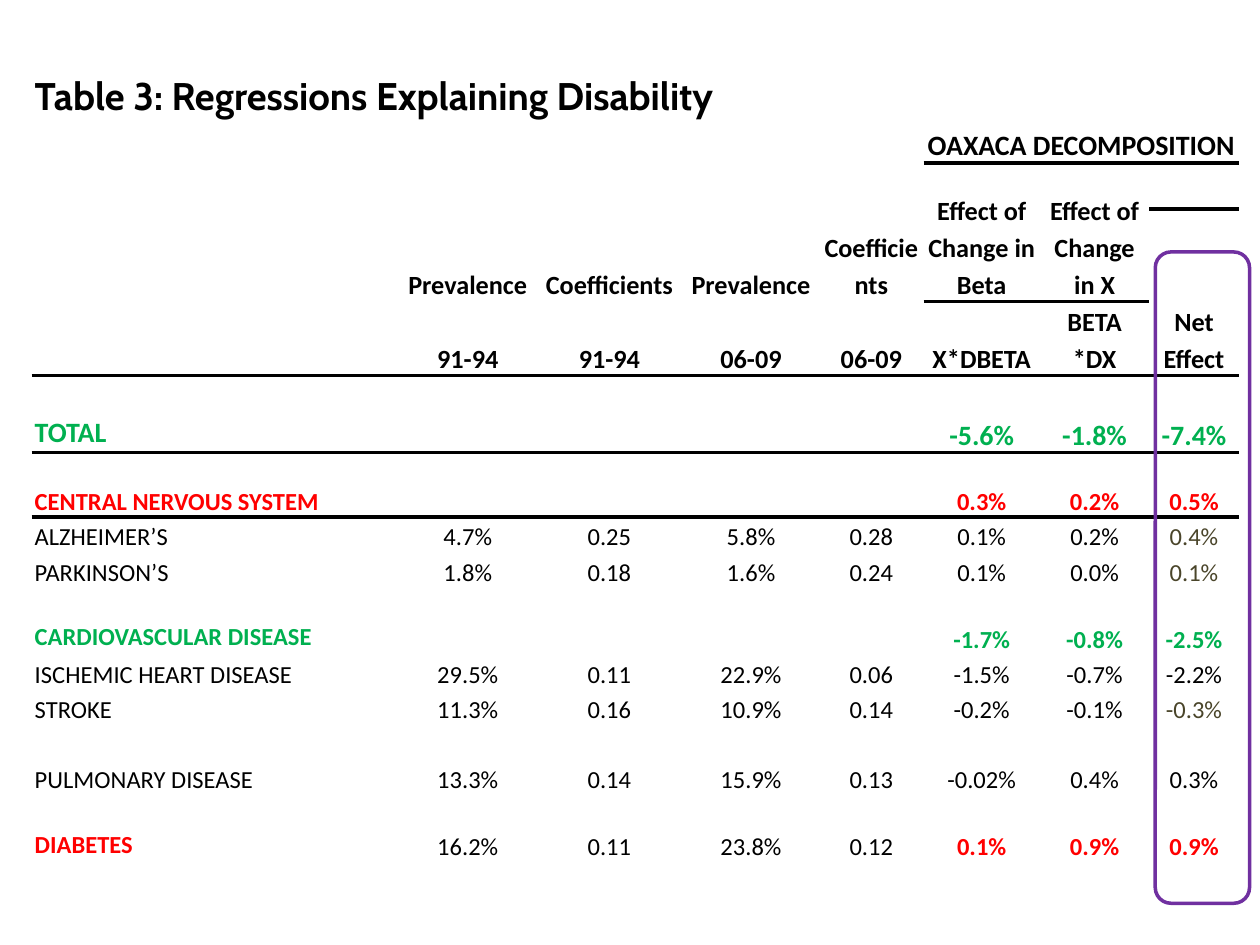
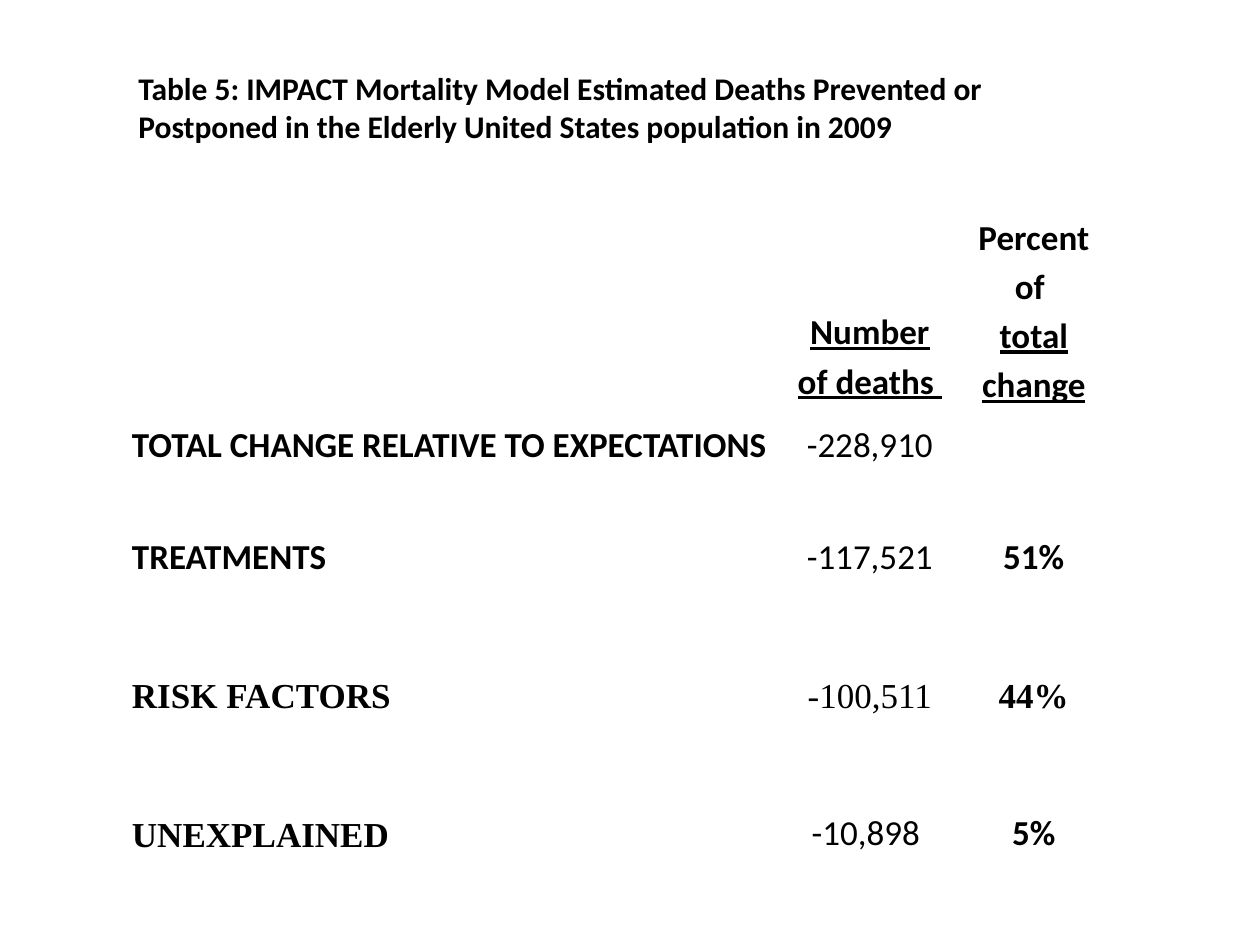
"""Builds two table slides on disability regressions and prevented deaths."""
from dataclasses import dataclass
from lxml.etree import SubElement
from pptx import Presentation
from pptx.dml.color import RGBColor
from pptx.enum.shapes import MSO_SHAPE as Preset
from pptx.enum.text import MSO_ANCHOR as Anchor, MSO_AUTO_SIZE as AutoSize, PP_ALIGN as Align
from pptx.oxml.ns import qn
from pptx.util import Cm, Pt


@dataclass(frozen=True)
class Theme:
    black: str = "000000"
    white: str = "FFFFFF"
    rise: str = "FF0000"
    fall: str = "00B050"
    muted: str = "4A452A"
    accent: str = "7030A0"
    body: str = "Calibri"
    heading: str = "Cabin"
    serif: str = "Times New Roman"
    title_size: float = 22
    subtitle_size: float = 18
    large: float = 20
    total: float = 16
    header: float = 15
    row: float = 14
    spacing: float = 1.15
    plain_table: str = "{2D5ABB26-0587-4C30-8999-92F81FD0307C}"


class SlideBuilder:
    def __init__(self, theme):
        self.theme = theme
        self.deck = Presentation()
        self.deck.slide_width, self.deck.slide_height = Cm(25.4), Cm(19.05)
        self.page = None

    def new_page(self):
        self.page = self.deck.slides.add_slide(self.deck.slide_layouts[6])

    def style(self, para, size, color=None, bold=False, font=None, underline=False):
        para.font.size = Pt(size)
        para.font.name = font or self.theme.body
        para.font.bold = bold
        para.font.underline = underline
        para.font.color.rgb = RGBColor.from_string(color or self.theme.black)

    def title(self, text, left, top, width, height):
        box = self.page.shapes.add_textbox(Cm(left), Cm(top), Cm(width), Cm(height))
        frame = box.text_frame
        frame.word_wrap = True
        frame.auto_size = AutoSize.SHAPE_TO_FIT_TEXT
        frame.text = text
        self.style(frame.paragraphs[0], self.theme.subtitle_size, bold=True)

    def table(self, left, top, widths, heights, inset):
        table = self.page.shapes.add_table(
            len(heights), len(widths), Cm(left), Cm(top), Cm(sum(widths)), Cm(sum(heights))).table
        table.first_row = table.horz_banding = False
        table._tbl.tblPr.find(qn("a:tableStyleId")).text = self.theme.plain_table
        for column, width in zip(table.columns, widths):
            column.width = Cm(width)
        for row, height in zip(table.rows, heights):
            row.height = Cm(height)
        for cell in table.iter_cells():
            cell.margin_left = cell.margin_right = Cm(inset)
            cell.margin_top = cell.margin_bottom = 0
            cell.vertical_anchor = Anchor.BOTTOM
            cell.fill.solid()
            cell.fill.fore_color.rgb = RGBColor.from_string(self.theme.white)
            self.style(cell.text_frame.paragraphs[0], self.theme.row)
        return table

    def fill_cell(self, cell, text, size, align=Align.CENTER, spacing=None, **look):
        cell.text = text
        for para in cell.text_frame.paragraphs:
            para.alignment = align
            para.line_spacing = spacing or self.theme.spacing
            self.style(para, size, **look)

    def rule_below(self, table, row, first=0):
        for column in range(first, len(table.columns)):
            for cell, edge in ((table.cell(row, column), "a:lnB"), (table.cell(row + 1, column), "a:lnT")):
                properties = cell._tc.get_or_add_tcPr()
                line = SubElement(properties, qn(edge), w=str(Pt(2.25)))
                SubElement(SubElement(line, qn("a:solidFill")), qn("a:srgbClr"), val=self.theme.black)
                properties.insert(0, line)

    def frame(self, left, top, width, height):
        shape = self.page.shapes.add_shape(
            Preset.ROUNDED_RECTANGLE, Cm(left), Cm(top), Cm(width), Cm(height))
        shape.shadow.inherit = False
        shape.fill.background()
        shape.line.color.rgb = RGBColor.from_string(self.theme.accent)
        shape.line.width = Pt(2)


def disability_page(builder):
    theme = builder.theme
    title_row, group_row, header_row, period_row, total_row = 0, 1, 2, 5, 6
    findings = [
        ("TOTAL", "", "", "", "", "-5.6%", "-1.8%", "-7.4%"),
        ("CENTRAL NERVOUS SYSTEM", "", "", "", "", "0.3%", "0.2%", "0.5%"),
        ("ALZHEIMER’S", "4.7%", "0.25", "5.8%", "0.28", "0.1%", "0.2%", "0.4%"),
        ("PARKINSON’S", "1.8%", "0.18", "1.6%", "0.24", "0.1%", "0.0%", "0.1%"),
        ("CARDIOVASCULAR DISEASE", "", "", "", "", "-1.7%", "-0.8%", "-2.5%"),
        ("ISCHEMIC HEART DISEASE", "29.5%", "0.11", "22.9%", "0.06", "-1.5%", "-0.7%", "-2.2%"),
        ("STROKE", "11.3%", "0.16", "10.9%", "0.14", "-0.2%", "-0.1%", "-0.3%"),
        (),
        ("PULMONARY DISEASE", "13.3%", "0.14", "15.9%", "0.13", "-0.02%", "0.4%", "0.3%"),
        ("DIABETES", "16.2%", "0.11", "23.8%", "0.12", "0.1%", "0.9%", "0.9%"),
    ]
    group_colors = {
        "TOTAL": theme.fall, "CENTRAL NERVOUS SYSTEM": theme.rise,
        "CARDIOVASCULAR DISEASE": theme.fall, "DIABETES": theme.rise,
    }
    muted_rows = ("ALZHEIMER’S", "PARKINSON’S", "STROKE")
    line, gap = 0.71, 1.35
    heights = [0.94, 0.86, 0.93, 0.93, 0.93, 1.4, 1.56, 1.3,
               line, line, gap, line, line, line, line, gap, line]
    widths = [7.42, 2.74, 2.97, 2.74, 2.11, 2.34, 2.21, 1.8]

    builder.new_page()
    table = builder.table(0.64, 1.48, widths, heights, 0.06)
    table.cell(title_row, 0).merge(table.cell(title_row, 7))
    builder.fill_cell(table.cell(title_row, 0), "Table 3: Regressions Explaining Disability",
                      theme.title_size, Align.LEFT, 1.0, font=theme.heading, bold=True)
    table.cell(group_row, 5).merge(table.cell(group_row, 7))
    builder.fill_cell(table.cell(group_row, 5), "OAXACA DECOMPOSITION", theme.total, bold=True)

    headers = [
        ("Prevalence", "91-94"), ("Coefficients", "91-94"),
        ("Prevalence", "06-09"), ("Coefficients", "06-09"),
        ("Effect of Change in Beta", "X*DBETA"), ("Effect of Change in X", "BETA\n*DX"),
    ]
    for column, (measure, period) in enumerate(headers, 1):
        table.cell(header_row, column).merge(table.cell(period_row - 1, column))
        builder.fill_cell(table.cell(header_row, column), measure, theme.header, bold=True)
        builder.fill_cell(table.cell(period_row, column), period, theme.header, bold=True)
    table.cell(header_row + 1, 7).merge(table.cell(period_row, 7))
    builder.fill_cell(table.cell(header_row + 1, 7), "Net Effect", theme.header, bold=True)

    for row, values in enumerate(findings, total_row):
        size = theme.total if row == total_row else theme.row
        for column, text in enumerate(values):
            if not text:
                continue
            group = group_colors.get(values[0]) if column in (0, 5, 6, 7) else None
            muted = theme.muted if column == 7 and values[0] in muted_rows else None
            builder.fill_cell(table.cell(row, column), text, size,
                              Align.CENTER if column else Align.LEFT,
                              color=group or muted, bold=bool(group))
        if values and values[0] in group_colors and heights[row] >= gap:
            table.cell(row, 0).margin_bottom = Cm(0.05)

    builder.rule_below(table, total_row)
    builder.rule_below(table, period_row)
    builder.rule_below(table, group_row, first=5)
    builder.frame(23.29, 5.08, 1.9, 13.13)


def mortality_page(builder):
    theme = builder.theme
    outcomes = {
        1: ("TOTAL CHANGE RELATIVE TO EXPECTATIONS", "-228,910", ""),
        3: ("TREATMENTS", "-117,521", "51%"),
        4: ("RISK FACTORS", "-100,511", "44%"),
        5: ("UNEXPLAINED", "-10,898 ", "5%"),
    }
    serif_cells = [(4, 0), (4, 1), (4, 2), (5, 0)]

    builder.new_page()
    builder.title("Table 5: IMPACT Mortality Model Estimated Deaths Prevented or "
                  "Postponed in the Elderly United States population in 2009",
                  2.54, 1.27, 19.89, 1.8)
    table = builder.table(2.48, 4.24, [13.34, 3.43, 3.18],
                          [3.84, 1.27, 1.27, 0.91, 2.79, 2.79], 0.18)
    builder.fill_cell(table.cell(0, 1), "Number of deaths ", theme.large, bold=True, underline=True)
    percent = table.cell(0, 2)
    builder.fill_cell(percent, "Percent of \ntotal change", theme.large, bold=True)
    percent.text_frame.paragraphs[1].font.underline = True

    for row, values in outcomes.items():
        for column, text in enumerate(values):
            if text:
                builder.fill_cell(table.cell(row, column), text, theme.large,
                                  Align.CENTER if column else Align.LEFT, bold=column != 1,
                                  font=theme.serif if (row, column) in serif_cells else None)


def main():
    builder = SlideBuilder(Theme())
    disability_page(builder)
    mortality_page(builder)
    builder.deck.save("out.pptx")


if __name__ == "__main__":
    main()
